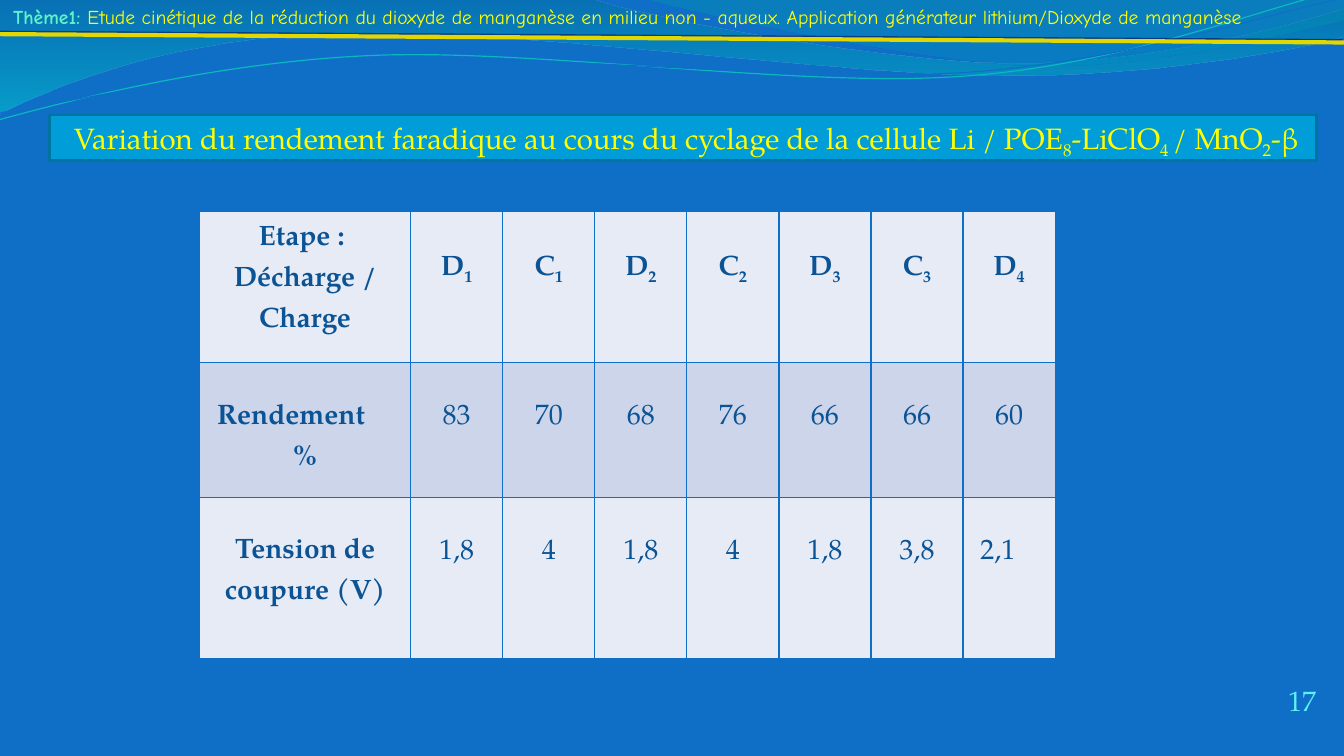
from dataclasses import dataclass
from typing import Optional

from lxml import etree
from pptx import Presentation
from pptx.dml.color import RGBColor
from pptx.enum.shapes import MSO_CONNECTOR
from pptx.enum.text import MSO_ANCHOR, MSO_AUTO_SIZE, PP_ALIGN
from pptx.oxml.ns import qn
from pptx.util import Cm, Pt

LEFT, CENTER, RIGHT = PP_ALIGN.LEFT, PP_ALIGN.CENTER, PP_ALIGN.RIGHT
TOP, MIDDLE, BOTTOM = MSO_ANCHOR.TOP, MSO_ANCHOR.MIDDLE, MSO_ANCHOR.BOTTOM
NO_AUTOFIT = MSO_AUTO_SIZE.NONE
STRAIGHT = MSO_CONNECTOR.STRAIGHT

SERIF, COMIC = "TeX Gyre Pagella", "Comic Neue"
BLUE = RGBColor(0x0F, 0x6F, 0xC6)
SKY = RGBColor(0x00, 0x9D, 0xD9)
DEEP_SKY = RGBColor(0x00, 0x74, 0xA1)
TURQUOISE = RGBColor(0x00, 0xC6, 0xCF)
TEAL = RGBColor(0x00, 0xA1, 0xA9)
STEEL = RGBColor(0x00, 0x8B, 0xBF)
CURVE_TEAL = RGBColor(0x0A, 0xB8, 0xBF)
YELLOW = RGBColor(0xFF, 0xFF, 0x00)
GOLD = RGBColor(0xE2, 0xD7, 0x00)
MINT = RGBColor(0x5F, 0xF3, 0xCA)
AQUA = RGBColor(0x5E, 0xF0, 0xF7)
NAVY = RGBColor(0x0B, 0x53, 0x94)
SHADOW = RGBColor(0x00, 0x00, 0x4C)
ROW_FILLS = (RGBColor(0xE7, 0xEB, 0xF5), RGBColor(0xCC, 0xD5, 0xEA))

Point = tuple[float, float]


@dataclass
class Stop:
    color: RGBColor
    position: float
    opacity: int


@dataclass
class Wave:
    """Outline in cm: one point per straight segment, three per Bézier curve."""
    start: Point
    segments: list[tuple[Point, ...]]
    stops: tuple[Stop, ...] = ()
    line: Optional[RGBColor] = None
    width: float = 0


@dataclass
class Row:
    height: float
    texts: list[str]
    bold: bool = False


WAVES = [
    Wave((0, 0), [
        ((14.91, -0.03),),
        ((16.1, 0.43), (22.48, 1.6), (25.68, 1.6)),
        ((28.91, 1.6), (32.46, 0.66), (33.86, 0.23)),
        ((33.91, 0.91),),
        ((33.3, 1.12), (29.46, 1.93), (25.25, 1.91)),
        ((21.06, 1.91), (12.93, 0.71), (8.71, 0.86)),
        ((4.37, 0.91), (1.55, 2.11), (-0.03, 2.87)),
        ((0, 0),),
    ], stops=(Stop(DEEP_SKY, 0, 45), Stop(TURQUOISE, 1, 55))),
    Wave((16.23, -0.03), [
        ((17.25, 0.28), (23.09, 1.57), (26.04, 1.65)),
        ((28.98, 1.75), (32.56, 0.81), (33.86, 0.53)),
        ((33.86, 0),),
        ((16.23, -0.03),),
    ], stops=(Stop(TEAL, 0, 30), Stop(STEEL, 0.8, 45))),
    Wave((-0.03, 3.02), [
        ((1.63, 2.57), (5.36, 1.57), (9.37, 1.4)),
        ((13.39, 1.22), (20.07, 2.21), (24.13, 1.93)),
        ((28.19, 1.68), (31.8, 0.2), (33.81, -0.25)),
    ], line=CURVE_TEAL, width=0.85),
    Wave((0, 2.84), [
        ((1.6, 2.62), (5.54, 1.68), (9.6, 1.5)),
        ((13.64, 1.35), (20.22, 2.08), (24.26, 1.83)),
        ((28.32, 1.57), (31.88, 0.36), (33.88, -0.05)),
    ], line=BLUE, width=0.75),
]

# Text between tildes is subscript
TITLE = ("Variation du rendement faradique au cours du cyclage de la cellule "
         "Li / POE~8~-LiClO~4 ~/ MnO~2~-β")
THEME = ("Etude cinétique de la réduction du dioxyde de manganèse en milieu non - aqueux. "
         "Application générateur lithium/Dioxyde de manganèse")
ROWS = [
    Row(3.81, ["Etape : \nDécharge / Charge", "D~1~", "C~1~", "D~2~", "C~2~",
               "D~3~", "C~3~", "D~4~"], bold=True),
    Row(3.39, ["Rendement %", "83", "70", "68", "76", "66", "66", "60"]),
    Row(4.06, ["Tension de coupure (V)", "1,8", "4", "1,8", "4", "1,8", "3,8", "2,1"]),
]
LABEL_WIDTH, VALUE_WIDTH = 5.32, 2.32
CELL_INSET, FIRST_LINE_GAP = 0.18, 0.7
EXTRA_RIGHT_INSET = {"Rendement %": 0.71, "2,1": 0.56}
HANGING_INDENT = {"Rendement %": 0.71}


def add_runs(paragraph, text: str, *, font: str = SERIF, size: float = 20,
             color: RGBColor = NAVY, bold: bool = False, align=LEFT,
             spacing: float = 1.0, hanging: float = 0) -> None:
    paragraph.alignment, paragraph.line_spacing = align, spacing
    if hanging:
        properties = paragraph._p.get_or_add_pPr()
        properties.set("marL", str(Cm(hanging)))
        properties.set("indent", str(-Cm(hanging)))
    for index, piece in enumerate(text.split("~")):
        if not piece:
            continue
        run = paragraph.add_run()
        run.text = piece
        run.font.name, run.font.size, run.font.bold = font, Pt(size), bold
        run.font.color.rgb = color
        if index % 2:
            run.font._element.set("baseline", "-25000")


def curve_segments(shape, segments: list[tuple[Point, ...]]) -> None:
    """Merge each group of three straight segments into one Bézier curve."""
    straight = iter(list(shape._element.iter(qn("a:lnTo"))))
    for segment in segments:
        group = [next(straight) for _ in segment]
        if len(group) == 3:
            curve = etree.Element(qn("a:cubicBezTo"))
            group[0].addprevious(curve)
            for line in group:
                curve.append(line[0])
                line.getparent().remove(line)


def add_wave(slide, wave: Wave) -> None:
    points = [wave.start] + [point for segment in wave.segments for point in segment]
    corners = [(Cm(x), Cm(y)) for x, y in points]
    builder = slide.shapes.build_freeform(*corners[0])
    builder.add_line_segments(corners[1:], close=bool(wave.stops))
    shape = builder.convert_to_shape()
    curve_segments(shape, wave.segments)
    shape.shadow.inherit = False
    if wave.stops:
        shape.line.fill.background()
        shape.fill.gradient()
        shape.fill.gradient_angle = 270
        for target, stop in zip(shape.fill.gradient_stops, wave.stops):
            target.color.rgb, target.position = stop.color, stop.position
            color = target._gs.find(qn("a:srgbClr"))
            etree.SubElement(color, qn("a:alpha"), val=str(stop.opacity * 1000))
    else:
        shape.fill.background()
        shape.line.color.rgb, shape.line.width = wave.line, Pt(wave.width)


def add_text_frame(slide, left: float, top: float, width: float, height: float, anchor):
    frame = slide.shapes.add_textbox(Cm(left), Cm(top), Cm(width), Cm(height)).text_frame
    frame.word_wrap, frame.vertical_anchor = True, anchor
    return frame


def set_borders(cell, color: RGBColor) -> None:
    for side in ("a:lnL", "a:lnR", "a:lnT", "a:lnB"):
        border = etree.SubElement(cell._tc.get_or_add_tcPr(), qn(side), w=str(Pt(1)))
        fill = etree.SubElement(border, qn("a:solidFill"))
        etree.SubElement(fill, qn("a:srgbClr"), val=str(color))


def fill_cell(cell, text: str, *, fill: RGBColor, bold: bool) -> None:
    set_borders(cell, BLUE)
    cell.fill.solid()
    cell.fill.fore_color.rgb = fill
    lines = text.split("\n")
    cell.margin_left, cell.margin_bottom = Cm(CELL_INSET), 0
    cell.margin_right = Cm(CELL_INSET + EXTRA_RIGHT_INSET.get(text, 0))
    cell.margin_top = Cm(FIRST_LINE_GAP) if len(lines) == 1 else 0
    for index, line in enumerate(lines):
        frame = cell.text_frame
        paragraph = frame.add_paragraph() if index else frame.paragraphs[0]
        add_runs(paragraph, line, bold=bold, align=CENTER, spacing=1.5,
                 hanging=HANGING_INDENT.get(text, 0))


def add_results_table(slide) -> None:
    column_count = len(ROWS[0].texts)
    widths = [LABEL_WIDTH] + [VALUE_WIDTH] * (column_count - 1)
    table = slide.shapes.add_table(len(ROWS), column_count, Cm(5.03), Cm(5.33),
                                   Cm(sum(widths)), Cm(sum(row.height for row in ROWS))).table
    table.first_row = table.horz_banding = False
    for column, width in zip(table.columns, widths):
        column.width = Cm(width)
    for row_index, row in enumerate(ROWS):
        table.rows[row_index].height = Cm(row.height)
        for column_index, text in enumerate(row.texts):
            fill_cell(table.cell(row_index, column_index), text,
                      fill=ROW_FILLS[row_index % 2], bold=row.bold or column_index == 0)


def add_title(slide) -> None:
    title = slide.shapes.title
    title.left, title.top, title.width, title.height = Cm(1.24), Cm(2.9), Cm(31.93), Cm(1.14)
    title.fill.solid()
    title.fill.fore_color.rgb = SKY
    title.line.color.rgb, title.line.width = DEEP_SKY, Pt(2)
    frame = title.text_frame
    frame.auto_size, frame.word_wrap, frame.vertical_anchor = NO_AUTOFIT, True, MIDDLE
    frame.margin_left, frame.margin_right = Cm(0.62), 0
    frame.margin_top, frame.margin_bottom = Cm(0.1), 0
    add_runs(frame.paragraphs[0], TITLE, size=21, color=YELLOW)


def add_header(slide) -> None:
    paragraph = add_text_frame(slide, 0.08, 0, 33.79, 1.52, TOP).paragraphs[0]
    add_runs(paragraph, "Thème1: ", font=COMIC, size=14, color=MINT, bold=True)
    add_runs(paragraph, THEME, font=COMIC, size=14, color=YELLOW)
    rule = slide.shapes.add_connector(STRAIGHT, 0, Cm(0.86), Cm(33.87), Cm(1.07))
    rule.line.color.rgb, rule.line.width = GOLD, Pt(3)
    effects = etree.SubElement(rule._element.spPr, qn("a:effectLst"))
    shadow = etree.SubElement(effects, qn("a:outerShdw"), dist=str(Pt(1.4)), dir=str(225 * 60000))
    color = etree.SubElement(shadow, qn("a:srgbClr"), val=str(SHADOW))
    etree.SubElement(color, qn("a:alpha"), val="50000")


def main() -> None:
    presentation = Presentation()
    presentation.slide_width, presentation.slide_height = Cm(33.87), Cm(19.05)
    slide = presentation.slides.add_slide(presentation.slide_layouts[5])
    slide.background.fill.solid()
    slide.background.fill.fore_color.rgb = BLUE
    for wave in WAVES:
        add_wave(slide, wave)
    # Slide number
    number = add_text_frame(slide, 31.39, 17.04, 1.78, 1.02, BOTTOM)
    number.margin_left = number.margin_right = number.margin_top = number.margin_bottom = 0
    add_runs(number.paragraphs[0], "17", color=AQUA, align=RIGHT)
    # Content and heading
    add_results_table(slide)
    add_title(slide)
    add_header(slide)
    presentation.save("out.pptx")


if __name__ == "__main__":
    main()
